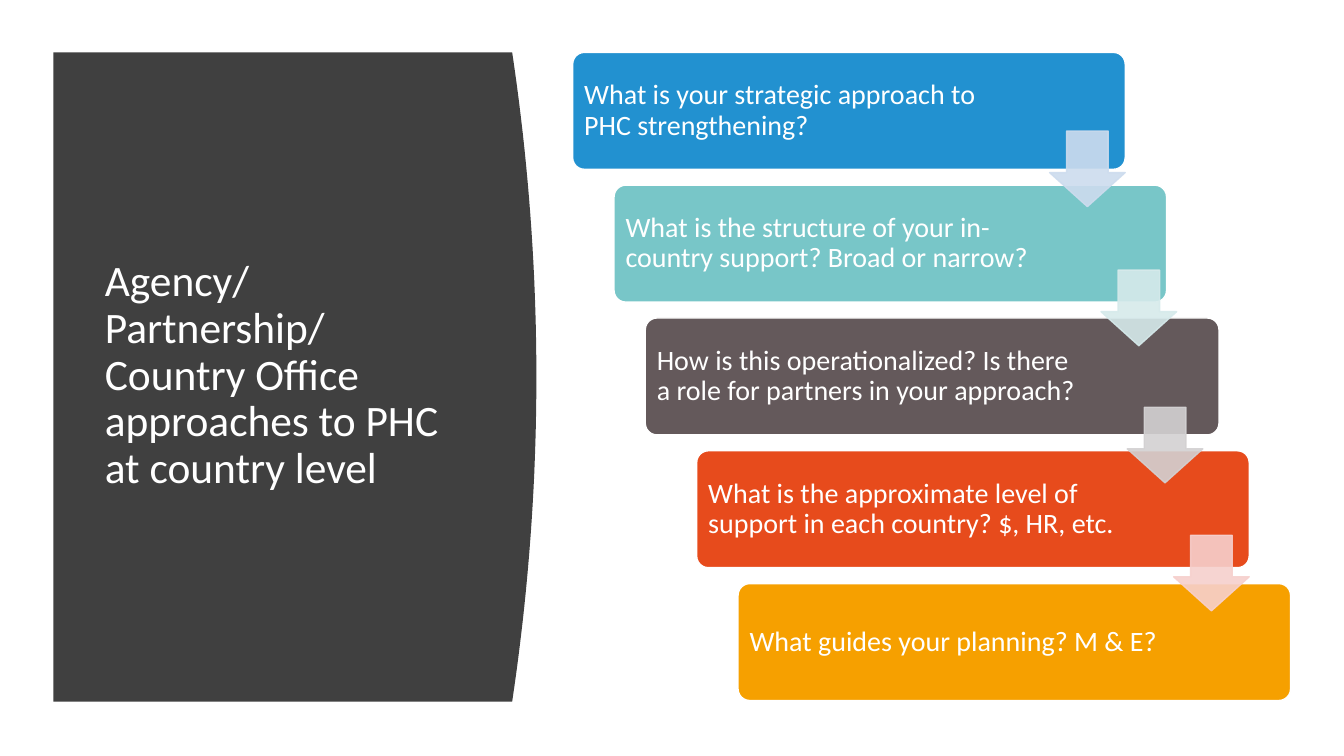
from lxml import etree
from pptx import Presentation
from pptx.dml.color import RGBColor
from pptx.enum.shapes import MSO_SHAPE
from pptx.enum.text import MSO_ANCHOR, MSO_AUTO_SIZE, PP_ALIGN
from pptx.oxml.ns import qn
from pptx.util import Inches, Pt

ROUNDED = MSO_SHAPE.ROUNDED_RECTANGLE
DOWN_ARROW = MSO_SHAPE.DOWN_ARROW
MIDDLE = MSO_ANCHOR.MIDDLE
NO_AUTOFIT = MSO_AUTO_SIZE.NONE
LEFT = PP_ALIGN.LEFT

TITLE = "Agency/Partnership/Country Office approaches to PHC at country level"
# question, colour, left, width
STEPS = [
    ("What is your strategic approach to PHC strengthening?", "blue", 5.68, 5.48),
    ("What is the structure of your in-country support? Broad or narrow?", "teal", 6.09, 5.48),
    ("How is this operationalized? Is there a role for partners in your approach?", "taupe", 6.4, 5.69),
    ("What is the approximate level of support in each country? $, HR, etc.", "red", 6.91, 5.48),
    ("What guides your planning? M & E?", "amber", 7.32, 5.48),
]
# colour, left, top
ARROWS = [
    ("pale blue", 10.41, 1.3),
    ("pale teal", 10.92, 2.68),
    ("pale taupe", 11.18, 4.04),
    ("pale red", 11.64, 5.31),
]
COLORS = {
    "white": "FFFFFF", "panel": "404040",
    "blue": "2291D0", "teal": "78C6C8", "taupe": "64595B",
    "red": "E74B1C", "amber": "F6A000",
    "pale blue": "CDDCEE", "pale teal": "D6EAEB",
    "pale taupe": "D3D1D2", "pale red": "F6D0CD",
}
FONT = "Calibri"
PANEL_LEFT, PANEL_TOP, PANEL_HEIGHT = 0.53, 0.52, 6.44
PANEL_EDGE, PANEL_BULGE, CURVE_PARTS = 5.08, 0.24, 40
STEP_TOP, STEP_HEIGHT, STEP_PITCH = 0.52, 1.16, 1.3175
ARROW_SIZE, ARROW_OPACITY = 0.75, 90


def color(name):
    return RGBColor.from_string(COLORS[name])


def paint(shape, fill, line=None):
    shape.shadow.inherit = False
    shape.fill.solid()
    shape.fill.fore_color.rgb = color(fill)
    if line:
        shape.line.color.rgb = color(line)
        shape.line.width = Pt(1)
    else:
        shape.line.fill.background()


def write(shape, text, size):
    frame = shape.text_frame
    frame.text = text
    frame.word_wrap = True
    frame.auto_size = NO_AUTOFIT
    frame.vertical_anchor = MIDDLE
    paragraph = frame.paragraphs[0]
    paragraph.alignment = LEFT
    paragraph.line_spacing = 0.9
    paragraph.font.name = FONT
    paragraph.font.size = Pt(size)
    paragraph.font.color.rgb = color("white")


def set_opacity(shape, percent):
    """Apply the opacity to both the fill and the outline."""
    for rgb in shape._element.spPr.iter(qn("a:srgbClr")):
        etree.SubElement(rgb, qn("a:alpha")).set("val", str(percent * 1000))


def add_panel(slide):
    """Draw the dark panel, whose right edge is a parabola."""
    edge = []
    for part in range(CURVE_PARTS + 1):
        offset = 2 * part / CURVE_PARTS - 1
        x = PANEL_EDGE + PANEL_BULGE * (1 - offset ** 2)
        y = PANEL_TOP + PANEL_HEIGHT * part / CURVE_PARTS
        edge.append((Inches(x), Inches(y)))
    builder = slide.shapes.build_freeform(Inches(PANEL_LEFT), Inches(PANEL_TOP))
    bottom_left = (Inches(PANEL_LEFT), Inches(PANEL_TOP + PANEL_HEIGHT))
    builder.add_line_segments(edge + [bottom_left], close=True)
    panel = builder.convert_to_shape()
    paint(panel, "panel")
    slide.shapes._spTree.insert(2, panel._element)  # behind the title


def add_title(slide):
    title = slide.shapes.title
    title.left, title.top = Inches(0.94), Inches(1.11)
    title.width, title.height = Inches(3.77), Inches(5.24)
    write(title, TITLE, 31)


def add_step(slide, index, question, fill, left, width):
    top = STEP_TOP + index * STEP_PITCH
    box = slide.shapes.add_shape(
        ROUNDED, Inches(left), Inches(top), Inches(width), Inches(STEP_HEIGHT))
    box.adjustments[0] = 0.1
    paint(box, fill, "white")
    write(box, question, 20)
    frame = box.text_frame
    frame.margin_left = frame.margin_top = frame.margin_bottom = Inches(0.08)
    frame.margin_right = Inches(1.28)  # keeps the text clear of the arrows


def add_arrow(slide, fill, left, top):
    arrow = slide.shapes.add_shape(
        DOWN_ARROW, Inches(left), Inches(top), Inches(ARROW_SIZE), Inches(ARROW_SIZE))
    arrow.adjustments[0] = 0.55
    arrow.adjustments[1] = 0.45
    paint(arrow, fill, fill)
    set_opacity(arrow, ARROW_OPACITY)


def main():
    presentation = Presentation()
    presentation.slide_width = Inches(13.33)
    presentation.slide_height = Inches(7.5)
    slide = presentation.slides.add_slide(presentation.slide_layouts[5])
    add_panel(slide)
    add_title(slide)
    for index, step in enumerate(STEPS):
        add_step(slide, index, *step)
    for arrow in ARROWS:
        add_arrow(slide, *arrow)
    presentation.save("out.pptx")


if __name__ == "__main__":
    main()
